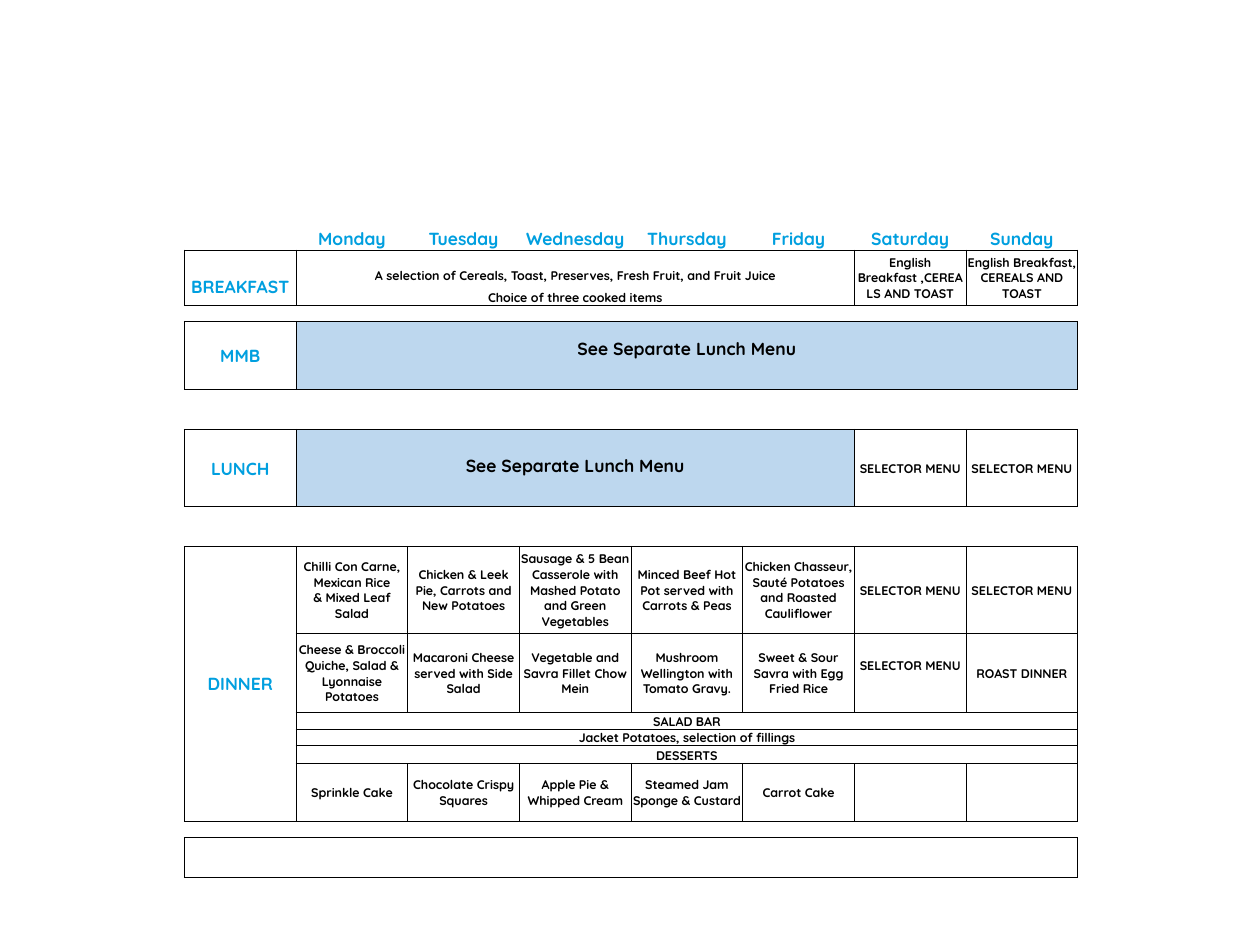
from itertools import product

from lxml.etree import SubElement
from pptx import Presentation
from pptx.dml.color import RGBColor
from pptx.enum.text import MSO_ANCHOR, PP_ALIGN
from pptx.oxml import parse_xml
from pptx.oxml.ns import nsdecls, qn
from pptx.util import Emu, Inches, Pt

COLORS = {"heading": "009FDF", "text": "000000", "line": "000000", "lunch": "BDD7EE"}
FONT = "Quicksand"
NO_STYLE = "{2D5ABB26-0587-4C30-8999-92F81FD0307C}"
SIDES = ["lnL", "lnR", "lnT", "lnB"]

DAYS = ["Monday", "Tuesday", "Wednesday", "Thursday", "Friday", "Saturday", "Sunday"]
HEIGHTS = [2.38, 1.81, 2.29, 1.71, 1.71, 7.24, 4.19, 8.19, 4.19,
           9.24, 8.38, 1.68, 1.68, 1.9, 6.1, 1.71, 4.19]
HEADER, BREAKFAST, MMB, LUNCH, DINNER, SALADS, DESSERTS, FOOTER = 0, 1, 5, 7, 9, 11, 14, 16
SATURDAY = 6

LUNCH_NOTE = "See Separate Lunch Menu"
SELECTOR = "SELECTOR MENU"
MAINS = [
    "Chilli Con Carne,\nMexican Rice\n& Mixed Leaf Salad",
    "Chicken & Leek Pie, Carrots and New Potatoes",
    "Sausage & 5 Bean Casserole with Mashed Potato and Green Vegetables",
    "Minced Beef Hot Pot served with Carrots & Peas",
    "Chicken Chasseur, Sauté Potatoes and Roasted Cauliflower",
    SELECTOR,
    SELECTOR,
]
SECOND_MAINS = [
    "Cheese & Broccoli Quiche, Salad & Lyonnaise Potatoes",
    "Macaroni Cheese served with Side Salad",
    "Vegetable and Savra Fillet Chow Mein",
    "Mushroom Wellington with Tomato Gravy.",
    "Sweet & Sour Savra with Egg Fried Rice",
    SELECTOR,
    "ROAST DINNER",
]
PUDDINGS = ["Sprinkle Cake", "Chocolate Crispy Squares", "Apple Pie & Whipped Cream",
            "Steamed Jam Sponge & Custard", "Carrot Cake", "", ""]
BARS = ["SALAD BAR", "Jacket Potatoes, selection of fillings", "DESSERTS"]


class WeekMenu:
    def __init__(self, deck):
        self.deck = deck
        self.slide = deck.slides.add_slide(deck.slide_layouts[6])
        self.origins = {}

    def across(self, percent):
        return Emu(round(self.deck.slide_width * percent / 100))

    def down(self, percent):
        return Emu(round(self.deck.slide_height * percent / 100))

    def grid(self, left, top, width, heights, columns):
        frame = self.slide.shapes.add_table(
            len(heights), columns, self.across(left), self.down(top),
            self.across(width), self.down(sum(heights)))
        self.table = frame.table
        self.table.first_row = self.table.horz_banding = False
        self.table._tbl.tblPr.find(qn("a:tableStyleId")).text = NO_STYLE
        for row, height in zip(self.table.rows, heights):
            row.height = self.down(height)
        for row, column in product(range(len(heights)), range(columns)):
            cell = self.table.cell(row, column)
            cell.fill.background()
            cell.margin_left = cell.margin_right = cell.margin_top = Inches(0.01)
            cell.margin_bottom = 0
            paragraph = cell.text_frame.paragraphs[0]
            SubElement(paragraph._p, qn("a:endParaRPr"), sz="800")

    def edge(self, row, column, side, points):
        paint = "<a:noFill/>"
        if points:
            paint = f'<a:solidFill><a:srgbClr val="{COLORS["line"]}"/></a:solidFill>'
        origin = self.origins.get((row, column), (row, column))
        for place in {origin, (row, column)}:
            properties = self.table.cell(*place)._tc.get_or_add_tcPr()
            for old in properties.findall(qn(f"a:{side}")):
                properties.remove(old)
            earlier = SIDES[:SIDES.index(side)]
            position = sum(properties.find(qn(f"a:{name}")) is not None for name in earlier)
            properties.insert(position, parse_xml(
                f'<a:{side} {nsdecls("a")} w="{Pt(points)}">{paint}</a:{side}>'))

    def frame(self, row, column, rows=1, columns=1, points=1):
        bottom, right = row + rows - 1, column + columns - 1
        for r, c in product(range(row, bottom + 1), range(column, right + 1)):
            touching = [c == column, c == right, r == row, r == bottom]
            for side, touches in zip(SIDES, touching):
                if touches:
                    self.edge(r, c, side, points)

    def open_below(self, row, columns):
        for column in columns:
            self.edge(row, column, "lnB", 0)
            self.edge(row + 1, column, "lnT", 0)

    def entry(self, row, column, text, rows=1, columns=1, size=10, color="text",
              anchor=MSO_ANCHOR.MIDDLE, fill=None, lift=0):
        cell = self.table.cell(row, column)
        if rows * columns > 1:
            cell.merge(self.table.cell(row + rows - 1, column + columns - 1))
            covered = product(range(row, row + rows), range(column, column + columns))
            self.origins.update(dict.fromkeys(covered, (row, column)))
        cell.vertical_anchor = anchor
        cell.margin_bottom = Inches(lift)
        if fill:
            cell.fill.solid()
            cell.fill.fore_color.rgb = RGBColor.from_string(COLORS[fill])
        if not text:
            return
        cell.text_frame.text = text
        for paragraph in cell.text_frame.paragraphs:
            paragraph.alignment = PP_ALIGN.CENTER
            for run in paragraph.runs:
                run.font.name = FONT
                run.font.size = Pt(size)
                run.font.bold = True
                run.font.color.rgb = RGBColor.from_string(COLORS[color])

    def heading(self, row, column, text, rows=1, anchor=MSO_ANCHOR.MIDDLE):
        self.entry(row, column, text, rows, size=14, color="heading", anchor=anchor)

    def lunch_note(self, row, columns):
        self.entry(row, 1, LUNCH_NOTE, columns=columns, size=14,
                   anchor=MSO_ANCHOR.BOTTOM, fill="lunch", lift=0.33)

    def dishes(self, row, names, first=1, rows=1):
        for column, name in enumerate(names, first):
            lift = 0.17 if (row, column) == (DINNER + 1, SATURDAY) else 0
            self.entry(row, column, name, rows, lift=lift)
            self.frame(row, column, rows, points=0.5)

    def meal(self, row, rows=1):
        self.frame(row, 0, rows, 8)
        self.frame(row, 0, rows)


def main():
    deck = Presentation()
    deck.slide_width, deck.slide_height = Inches(14), Inches(10.5)
    menu = WeekMenu(deck)
    menu.grid(14.64, 24.05, 70.9, HEIGHTS, 8)

    for column, day in enumerate(DAYS, 1):
        menu.heading(HEADER, column, day, anchor=MSO_ANCHOR.BOTTOM)

    menu.heading(BREAKFAST + 1, 0, "BREAKFAST", rows=2)
    menu.entry(BREAKFAST + 1, 1,
               "A selection of Cereals, Toast, Preserves, Fresh Fruit, and Fruit Juice",
               columns=5, anchor=MSO_ANCHOR.TOP)
    menu.entry(BREAKFAST + 2, 1, "Choice of three cooked items", columns=5)
    menu.dishes(BREAKFAST, ["English Breakfast ,CEREALS AND TOAST",
                            "English Breakfast, CEREALS AND TOAST"], SATURDAY, rows=3)
    menu.meal(BREAKFAST, 3)
    menu.open_below(BREAKFAST, range(SATURDAY))
    menu.open_below(BREAKFAST + 1, range(1, SATURDAY))

    menu.heading(MMB, 0, "MMB")
    menu.lunch_note(MMB, 7)
    menu.meal(MMB)

    menu.heading(LUNCH, 0, "LUNCH")
    menu.lunch_note(LUNCH, 5)
    menu.dishes(LUNCH, [SELECTOR, SELECTOR], SATURDAY)
    menu.meal(LUNCH)

    menu.heading(DINNER, 0, "DINNER", rows=6)
    menu.dishes(DINNER, MAINS)
    menu.dishes(DINNER + 1, SECOND_MAINS)
    menu.dishes(DESSERTS, PUDDINGS)
    for row, bar in enumerate(BARS, SALADS):
        menu.entry(row, 1, bar, columns=7, anchor=MSO_ANCHOR.BOTTOM)
        menu.frame(row, 1, columns=7)
    menu.meal(DINNER, 6)

    menu.entry(FOOTER, 0, "", columns=8)
    menu.frame(FOOTER, 0, columns=8)
    deck.save("out.pptx")


if __name__ == "__main__":
    main()
